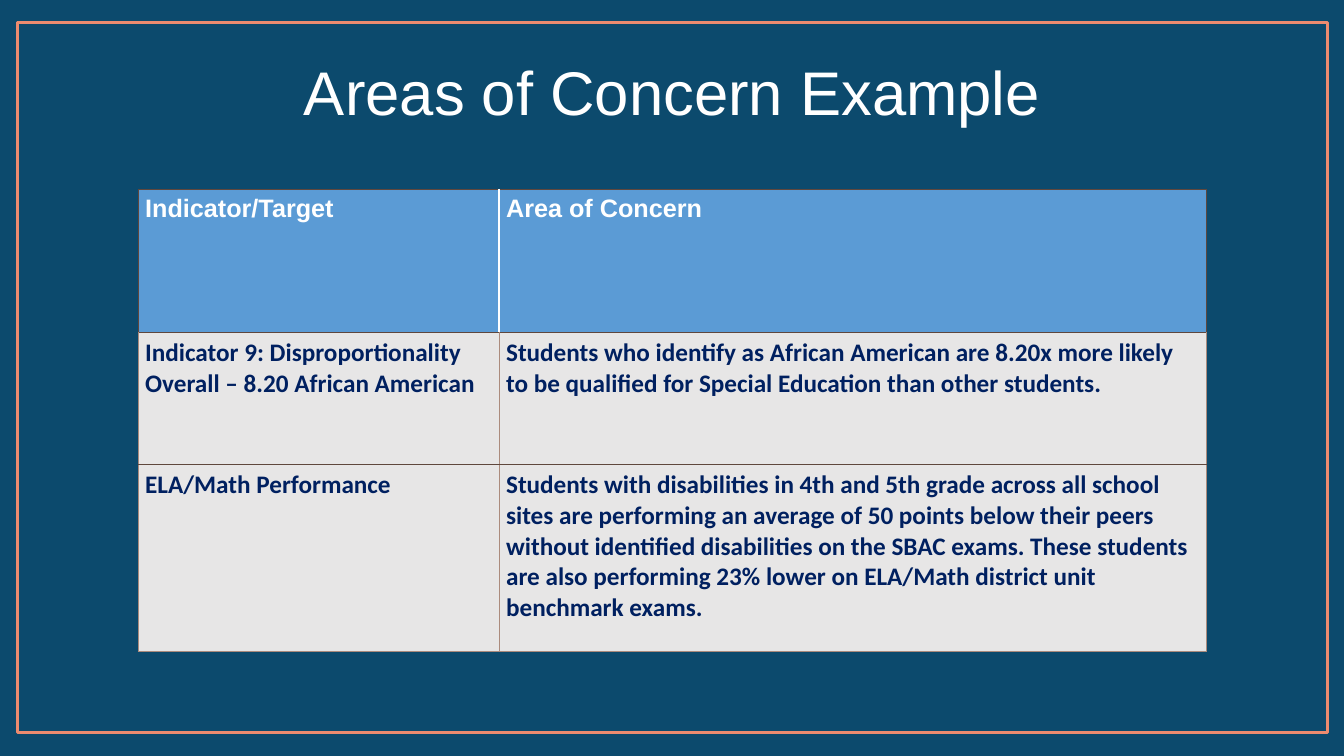
from lxml import etree
from pptx import Presentation
from pptx.dml.color import RGBColor
from pptx.enum.shapes import MSO_SHAPE
from pptx.enum.text import MSO_ANCHOR, PP_ALIGN
from pptx.oxml.ns import qn
from pptx.util import Inches, Pt

RECTANGLE = MSO_SHAPE.RECTANGLE
MIDDLE = MSO_ANCHOR.MIDDLE
CENTER = PP_ALIGN.CENTER

# Content
TITLE = "Areas of Concern Example"
ROWS = [
    ("Indicator/Target", "Area of Concern"),
    ("Indicator 9: Disproportionality Overall – 8.20 African American",
     "Students who identify as African American are 8.20x more likely to be "
     "qualified for Special Education than other students."),
    ("ELA/Math Performance",
     "Students with disabilities in 4th and 5th grade across all school sites "
     "are performing an average of 50 points below their peers without "
     "identified disabilities on the SBAC exams. These students are also "
     "performing 23% lower on ELA/Math district unit benchmark exams."),
]

# Layout and colours
FRAME_LEFT, FRAME_TOP, FRAME_WIDTH, FRAME_HEIGHT = 0.17, 0.22, 13, 7.05
TITLE_HEIGHT = 1.45
TABLE_LEFT, TABLE_TOP = 1.37, 1.88
COLUMN_WIDTHS = [3.58, 7.02]
ROW_HEIGHTS = [1.42, 1.31, 1.85]
BACKGROUND, FRAME, WHITE, NAVY = "0C4A6D", "ED8B6F", "FFFFFF", "002060"
HEADER_FILL, BODY_FILL = "5B9BD5", "E7E6E6"
DARK_BORDER, LIGHT_BORDER = ("5F473D", 0.85), ("AB8B7D", 0.85)
WHITE_BORDER = (WHITE, 1)


def paint(color_format, color):
    color_format.rgb = RGBColor.from_string(color)


def fill(target, color):
    target.fill.solid()
    paint(target.fill.fore_color, color)


def style_text(paragraph, font_name, size, color, bold=False):
    for run in paragraph.runs:
        run.font.name = font_name
        run.font.size = Pt(size)
        run.font.bold = bold
        paint(run.font.color, color)


def add_border(cell, side, color, width):
    properties = cell._tc.get_or_add_tcPr()
    line = etree.SubElement(properties, qn("a:ln" + side), w=str(Pt(width)))
    solid = etree.SubElement(line, qn("a:solidFill"))
    etree.SubElement(solid, qn("a:srgbClr"), val=color)


def vertical_border(row, edge):
    if row > 0:
        return LIGHT_BORDER
    return DARK_BORDER if edge in (0, len(COLUMN_WIDTHS)) else WHITE_BORDER


def horizontal_border(edge):
    return LIGHT_BORDER if edge == len(ROWS) else DARK_BORDER


def add_frame(slide):
    frame = slide.shapes.add_shape(
        RECTANGLE, Inches(FRAME_LEFT), Inches(FRAME_TOP),
        Inches(FRAME_WIDTH), Inches(FRAME_HEIGHT))
    frame.shadow.inherit = False
    frame.fill.background()
    frame.line.width = Pt(2)
    paint(frame.line.color, FRAME)


def add_title(slide):
    title = slide.shapes.add_textbox(
        Inches(FRAME_LEFT), Inches(FRAME_TOP),
        Inches(FRAME_WIDTH), Inches(TITLE_HEIGHT))
    text_frame = title.text_frame
    text_frame.word_wrap = True
    text_frame.vertical_anchor = MIDDLE
    text_frame.text = TITLE
    paragraph = text_frame.paragraphs[0]
    paragraph.alignment = CENTER
    paragraph.line_spacing = 0.9
    style_text(paragraph, "Arial", 44, WHITE)


def add_concern_table(slide):
    table = slide.shapes.add_table(
        len(ROWS), len(COLUMN_WIDTHS), Inches(TABLE_LEFT), Inches(TABLE_TOP),
        Inches(sum(COLUMN_WIDTHS)), Inches(sum(ROW_HEIGHTS))).table
    table.horz_banding = False
    for column, width in zip(table.columns, COLUMN_WIDTHS):
        column.width = Inches(width)
    for table_row, height in zip(table.rows, ROW_HEIGHTS):
        table_row.height = Inches(height)

    for row, texts in enumerate(ROWS):
        is_header = row == 0
        for column, text in enumerate(texts):
            cell = table.cell(row, column)
            cell.margin_left = cell.margin_right = Inches(0.07)
            cell.margin_top = cell.margin_bottom = Inches(0.05)
            # Borders come before the fill in the cell properties
            add_border(cell, "L", *vertical_border(row, column))
            add_border(cell, "R", *vertical_border(row, column + 1))
            add_border(cell, "T", *horizontal_border(row))
            add_border(cell, "B", *horizontal_border(row + 1))
            fill(cell, HEADER_FILL if is_header else BODY_FILL)
            cell.text_frame.text = text
            style_text(cell.text_frame.paragraphs[0],
                       "Arial" if is_header else "Calibri", 18,
                       WHITE if is_header else NAVY, bold=True)


def main():
    presentation = Presentation()
    presentation.slide_width = Inches(13.33)
    presentation.slide_height = Inches(7.5)
    slide = presentation.slides.add_slide(presentation.slide_layouts[6])
    fill(slide.background, BACKGROUND)
    add_frame(slide)
    add_title(slide)
    add_concern_table(slide)
    presentation.save("out.pptx")


if __name__ == "__main__":
    main()
